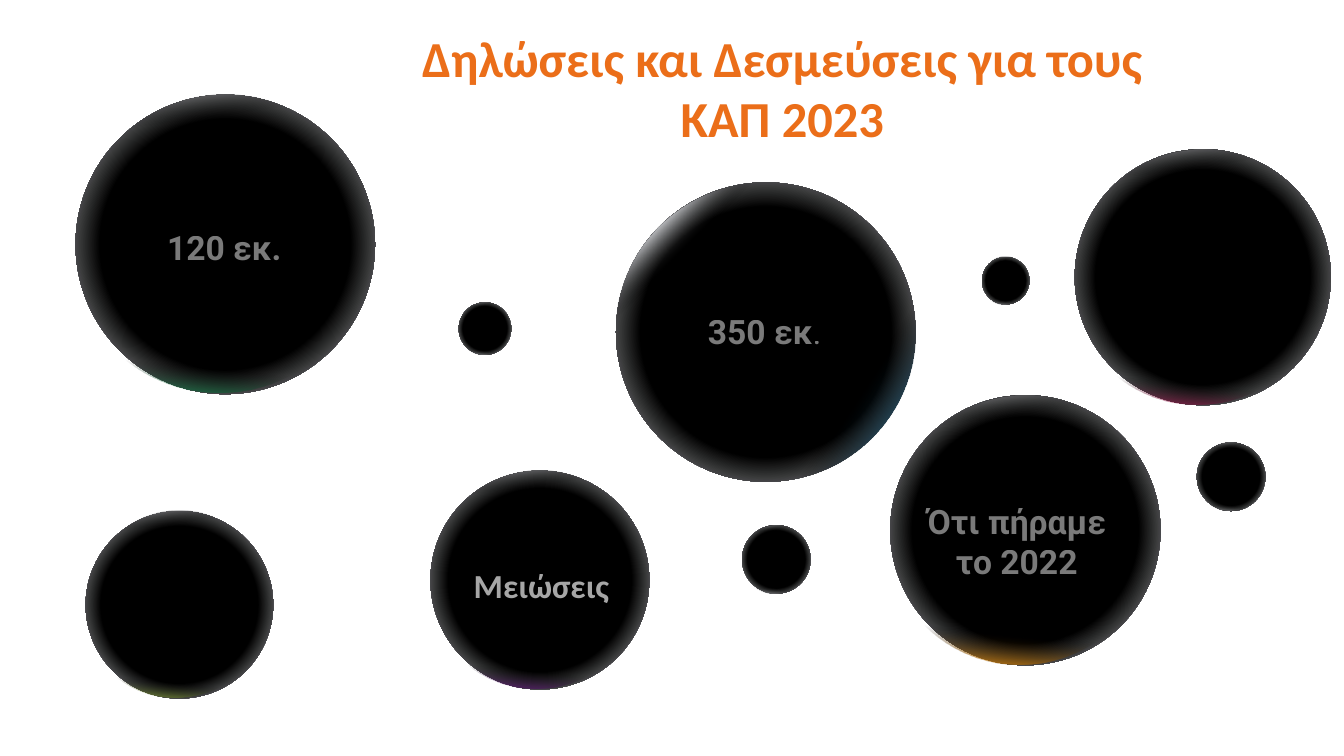
from pptx import Presentation
from pptx.dml.color import RGBColor
from pptx.enum.shapes import MSO_SHAPE as Shape
from pptx.enum.text import MSO_ANCHOR as Anchor, PP_ALIGN as Align
from pptx.oxml import parse_xml
from pptx.oxml.ns import nsdecls, qn
from pptx.util import Inches, Pt

HEX = {
    "white": "FFFFFF", "black": "000000", "pale": "F6F8FC", "grey": "A6A6A6",
    "title": "EB6E19", "amber": "FF9900", "lime": "CCFF33", "blue": "1A526E",
    "pink": "FF0066", "plum": "9900CC", "green": "00CC66",
}
CIRCLE = ('<a:path path="circle"><a:fillToRect l="50000" t="50000" '
          'r="50000" b="50000"/></a:path>')
SLANT = '<a:lin ang="2700000" scaled="0"/>'

prs = Presentation()
prs.slide_width, prs.slide_height = Inches(13.33), Inches(7.5)
slide = prs.slides.add_slide(prs.slide_layouts[6])
shapes = slide.shapes


def add_disc(x, y, w, h, turn=0, tone="white", stops=None, course=""):
    """Draw an ellipse, plain or with gradient stops (percent, tone, alpha)."""
    disc = shapes.add_shape(Shape.OVAL, Inches(x), Inches(y), Inches(w), Inches(h))
    disc.rotation = turn
    disc.shadow.inherit = False
    disc.line.fill.background()
    disc.fill.solid()
    disc.fill.fore_color.rgb = RGBColor.from_string(HEX[tone])
    if stops:
        marks = "".join(
            f'<a:gs pos="{pos * 1000}"><a:srgbClr val="{HEX[name]}">'
            f'<a:alpha val="{alpha * 1000}"/></a:srgbClr></a:gs>'
            for pos, name, alpha in stops)
        props = disc.element.spPr
        props.replace(props.find(qn("a:solidFill")), parse_xml(
            f'<a:gradFill {nsdecls("a")} rotWithShape="1">'
            f'<a:gsLst>{marks}</a:gsLst>{course}</a:gradFill>'))


def set_alpha(owner, alpha):
    """Make the solid fill inside an element see-through."""
    color = owner.find(qn("a:solidFill"))[0]
    color.append(parse_xml(f'<a:alpha {nsdecls("a")} val="{alpha * 1000}"/>'))


# Glint outline around its centre, as shares of the ball size:
# the start, then two handles and an end for each of four curves
dots = [
    (-0.4, 0.06),
    (-0.4, -0.01), (-0.22, -0.22), (0, -0.22),
    (0.22, -0.22), (0.4, -0.09), (0.4, 0.06),
    (0.4, 0.22), (0.24, 0.22), (0.02, 0.22),
    (-0.2, 0.22), (-0.4, 0.14), (-0.4, 0.06),
]

# Balls: left, top, size, tint, tint stops, glint tone, glint alpha
usual = (0, 13, 23)
balls = [
    (7.36, 5.21, 0.68, "pale", usual, "white", 12),
    (4.55, 3.0, 0.52, "pale", usual, "white", 12),
    (11.87, 4.39, 0.68, "pale", usual, "white", 12),
    (9.74, 2.55, 0.47, "pale", usual, "white", 12),
    (8.83, 3.92, 2.68, "amber", (12, 15, 25), "amber", 36),
    (0.85, 5.07, 1.86, "lime", usual, "white", 12),
    (6.11, 1.81, 2.97, "blue", (12, 16, 28), "blue", 52),
    (10.66, 1.48, 2.54, "pink", usual, "pink", 41),
    (4.27, 4.67, 2.17, "plum", usual, "white", 12),
    (0.75, 0.94, 2.97, "green", usual, "green", 34),
]
for num, (x, y, size, tint, marks, tone, alpha) in enumerate(balls):
    main = tint == "blue"
    # Halo behind the ball
    if num:
        dx, dy = (-0.02, 0.01) if main else (0.24, -0.08)
        add_disc(x + dx * size, y + dy * size, 0.4 * size, 0.35 * size, 327.9)
    # Body, upper light and lower tint
    add_disc(x, y, size, size,
             stops=[(59, "black", 100), (100, "pale", 100)], course=CIRCLE)
    add_disc(x, y, size, size, 0 if main else 37.1, course=SLANT,
             stops=[(0, "pale", 100), (13, "pale", 100), (23, "black", 0)])
    shift = 0 if main else 0.02 * size
    low, mid, high = marks
    add_disc(x - shift, y - shift / 5, size, size, 168.5 if main else 230.8,
             stops=[(low, tint, 100), (mid, tint, 100), (high, "black", 0)], course=SLANT)
    # Soft glint, each three segments merged into one curve
    spots = [(Inches(x + (0.355 + px) * size), Inches(y + (0.33 + py) * size))
             for px, py in dots]
    pen = shapes.build_freeform(*spots[0])
    pen.add_line_segments(spots[1:], close=True)
    glint = pen.convert_to_shape()
    props = glint.element.spPr
    lines = list(props.iter(qn("a:lnTo")))
    for first in range(0, len(lines), 3):
        curve = parse_xml(f'<a:cubicBezTo {nsdecls("a")}/>')
        lines[first].addprevious(curve)
        for line in lines[first:first + 3]:
            curve.append(line[0])
            line.getparent().remove(line)
    glint.rotation = 327.9
    glint.shadow.inherit = False
    glint.line.fill.background()
    glint.fill.solid()
    glint.fill.fore_color.rgb = RGBColor.from_string(HEX[tone])
    set_alpha(props, alpha)
    props.find(qn("a:effectLst")).append(parse_xml(
        f'<a:softEdge {nsdecls("a")} rad="{Inches(size / 4)}"/>'))

# Labels and title: box, runs (text, bold), size, font, tone, alpha, anchor
top, mid = Anchor.TOP, Anchor.MIDDLE
labels = [
    ((6.1, 3.04, 2.97, 0.5), [("350 εκ", True), (".", False)], 24, "Roboto", "white", 48, top),
    ((9, 4.92, 2.17, 0.91), [("Ότι πήραμε το 2022", True)], 24, "Roboto", "white", 48, top),
    ((0.74, 2.2, 2.97, 0.5), [("120 εκ.", True)], 24, "Roboto", "white", 48, top),
    ((4.55, 5.52, 1.64, 0.56), [("Μειώσεις", True)], 24, "Calibri", "grey", 100, mid),
    ((3.79, 0.32, 7.94, 1.09), [("Δηλώσεις και Δεσμεύσεις για τους ΚΑΠ 2023", True)],
     36, "Calibri", "title", 100, mid),
]
for box, runs, size, face, tone, alpha, anchor in labels:
    frame = shapes.add_textbox(*map(Inches, box)).text_frame
    frame.word_wrap = True
    frame.vertical_anchor = anchor
    para = frame.paragraphs[0]
    para.alignment = Align.CENTER
    para.font.size = Pt(size)
    para.font.name = face
    for text, bold in runs:
        run = para.add_run()
        run.text = text
        run.font.bold = bold
        run.font.color.rgb = RGBColor.from_string(HEX[tone])
        if alpha < 100:
            set_alpha(run.font.fill._xPr, alpha)

prs.save("out.pptx")
